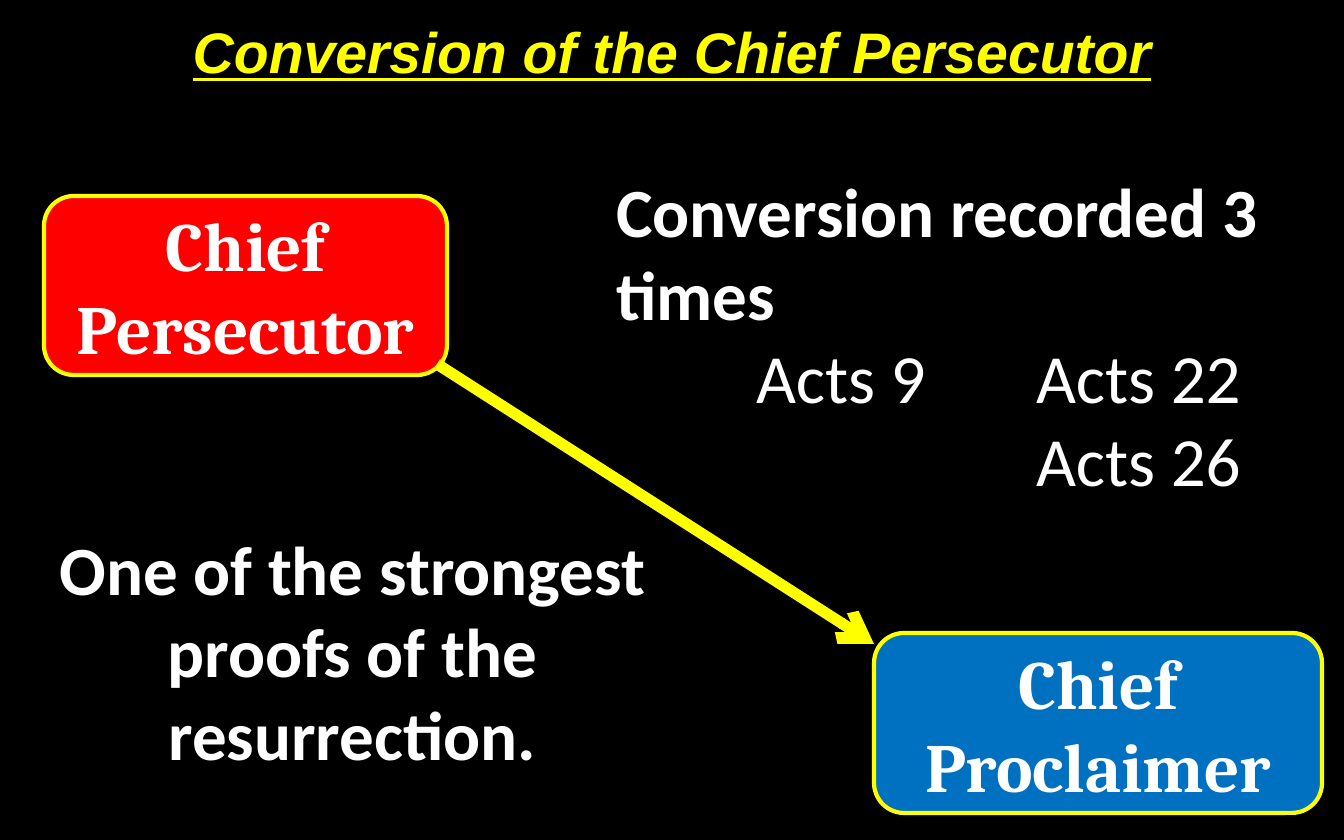
import pptx
import pptx.util
import pptx.dml.color
import pptx.enum.shapes
import pptx.enum.text
import pptx.oxml.ns
import lxml.etree

SCALE = 914400 / 134.4
SLIDE_SIZE = (1344, 840)
COLORS = {"black": "000000", "white": "FFFFFF", "yellow": "FFFF00",
          "red": "FF0000", "blue": "0070C0"}
ALIGN = pptx.enum.text.PP_ALIGN
ANCHOR = pptx.enum.text.MSO_ANCHOR

TITLE = {
    "box": (67, 11, 1210, 79),
    "text": "Conversion of the Chief Persecutor",
    "font": {"name": "Arial", "size": pptx.util.Pt(30.6), "bold": True,
             "italic": True, "underline": True},
}
ROLES = [
    ("Chief Proclaimer", (874, 633, 448, 180), "blue"),
    ("Chief Persecutor", (44, 196, 403, 179), "red"),
]
ROLE_FONT = {"name": "Cambria", "size": pptx.util.Pt(37), "bold": True}
ARROW = ((437, 364), (874, 644))
NOTES = [
    ((11, 521, 683, 262), ALIGN.CENTER,
     [("One of the strongest proofs of the resurrection.", True)]),
    ((605, 164, 695, 512), ALIGN.LEFT,
     [("Conversion recorded 3 times", True),
      ("\tActs 9\tActs 22", False),
      ("\t\tActs 26", False)]),
]
NOTE_FONT = {"name": "Calibri", "size": pptx.util.Pt(37)}
TAB_STOPS = (140, 420)
TEXT_INSETS = (11, 5)
ROLE_INSETS = (13, 7)


def emu(pixels):
    return pptx.util.Emu(round(pixels * SCALE))


def color(name):
    return pptx.dml.color.RGBColor.from_string(COLORS[name])


def set_attributes(target, values):
    for name, value in values.items():
        setattr(target, name, value)


def prepare_frame(shape, anchor, insets):
    across, down = map(emu, insets)
    set_attributes(shape.text_frame, {
        "word_wrap": True, "auto_size": pptx.enum.text.MSO_AUTO_SIZE.NONE,
        "vertical_anchor": anchor, "margin_left": across, "margin_right": across,
        "margin_top": down, "margin_bottom": down})
    return shape.text_frame


def write(paragraph, text, font, alignment, color_name="white"):
    paragraph.alignment = alignment
    run = paragraph.add_run()
    run.text = text
    set_attributes(run.font, font)
    run.font.color.rgb = color(color_name)


def add_tab_stops(paragraph):
    properties = paragraph._p.get_or_add_pPr()
    stops = lxml.etree.SubElement(properties, pptx.oxml.ns.qn("a:tabLst"))
    for position in TAB_STOPS:
        lxml.etree.SubElement(stops, pptx.oxml.ns.qn("a:tab"),
                              pos=str(emu(position)), algn="l")


def add_title(slide):
    title = slide.shapes.title
    set_attributes(title, dict(zip(("left", "top", "width", "height"),
                                   map(emu, TITLE["box"]))))
    frame = prepare_frame(title, ANCHOR.MIDDLE, TEXT_INSETS)
    write(frame.paragraphs[0], TITLE["text"], TITLE["font"], ALIGN.CENTER, "yellow")


def add_role(slide, text, box, fill):
    shape = slide.shapes.add_shape(
        pptx.enum.shapes.MSO_SHAPE.ROUNDED_RECTANGLE, *map(emu, box))
    shape.shadow.inherit = False
    shape.fill.solid()
    shape.fill.fore_color.rgb = color(fill)
    shape.line.color.rgb = color("yellow")
    shape.line.width = pptx.util.Pt(2.25)
    frame = prepare_frame(shape, ANCHOR.MIDDLE, ROLE_INSETS)
    write(frame.paragraphs[0], text, ROLE_FONT, ALIGN.CENTER)


def add_arrow(slide):
    start, end = ARROW
    arrow = slide.shapes.add_connector(
        pptx.enum.shapes.MSO_CONNECTOR.STRAIGHT, *map(emu, start + end))
    arrow.line.color.rgb = color("yellow")
    arrow.line.width = pptx.util.Pt(6)
    lxml.etree.SubElement(arrow.line._get_or_add_ln(),
                          pptx.oxml.ns.qn("a:tailEnd"), type="arrow")
    lxml.etree.SubElement(arrow._element.spPr, pptx.oxml.ns.qn("a:effectLst"))


def add_note(slide, box, alignment, lines):
    frame = prepare_frame(slide.shapes.add_textbox(*map(emu, box)),
                          ANCHOR.TOP, TEXT_INSETS)
    for index, (text, bold) in enumerate(lines):
        paragraph = frame.add_paragraph() if index else frame.paragraphs[0]
        write(paragraph, text, {**NOTE_FONT, "bold": bold}, alignment)
        if "\t" in text:
            add_tab_stops(paragraph)


def main():
    presentation = pptx.Presentation()
    presentation.slide_width, presentation.slide_height = map(emu, SLIDE_SIZE)
    slide = presentation.slides.add_slide(presentation.slide_layouts[5])
    slide.background.fill.solid()
    slide.background.fill.fore_color.rgb = color("black")
    add_title(slide)
    for role in ROLES:
        add_role(slide, *role)
    add_arrow(slide)
    for note in NOTES:
        add_note(slide, *note)
    presentation.save("out.pptx")


if __name__ == "__main__":
    main()
